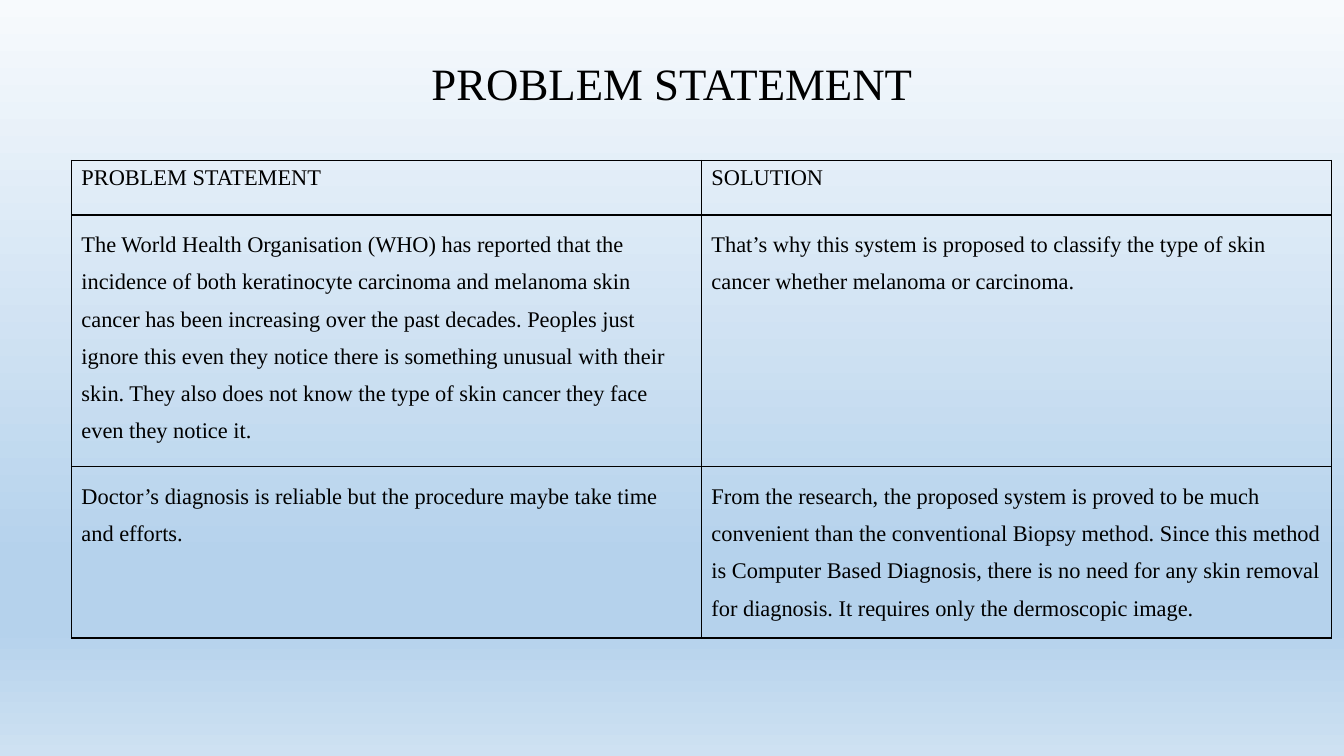
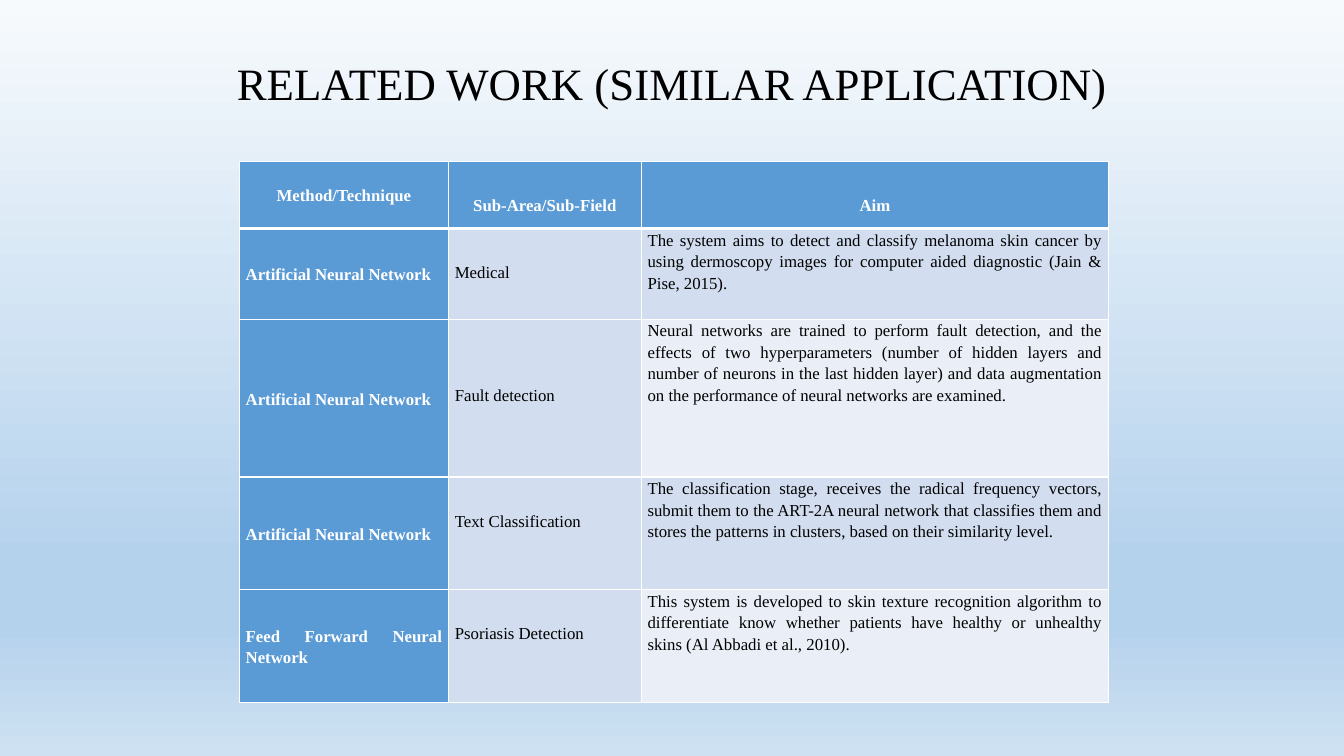
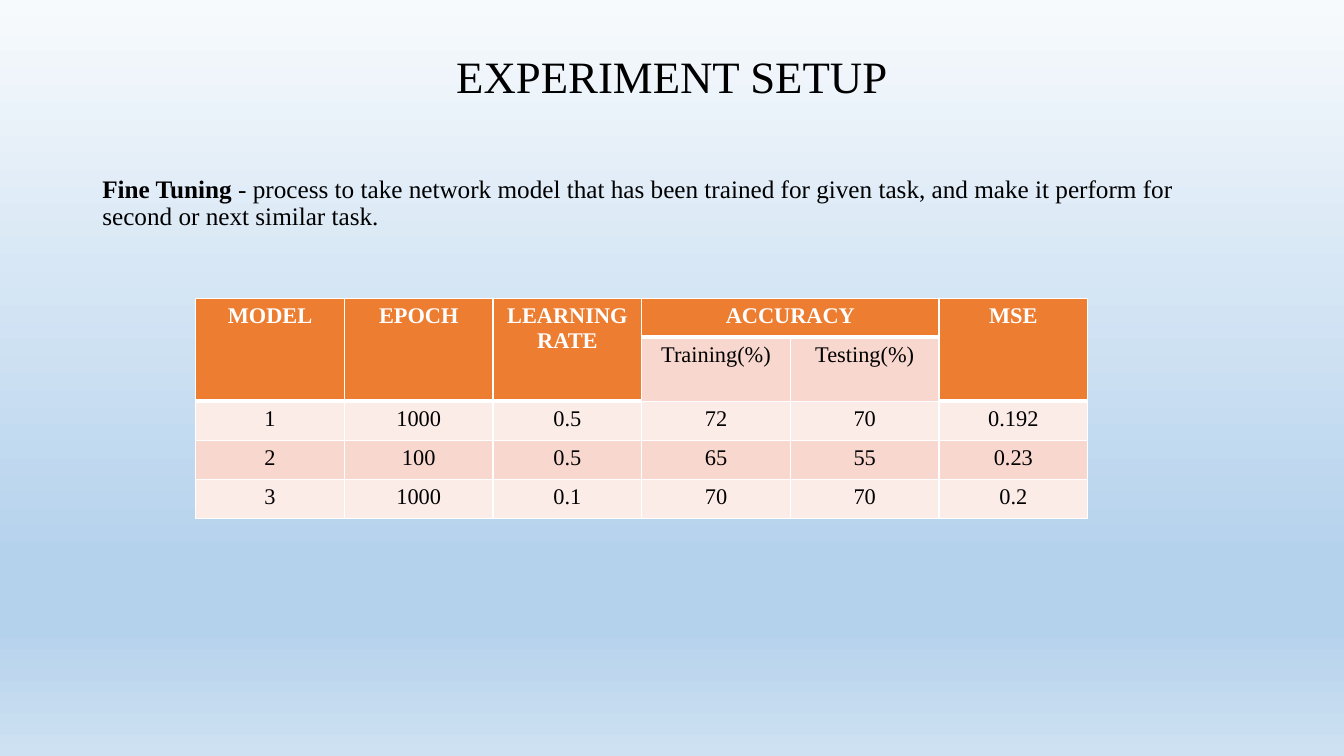
from collections import namedtuple

from lxml.etree import SubElement
from pptx import Presentation
from pptx.dml.color import RGBColor
from pptx.enum.text import MSO_ANCHOR as Anchor, PP_ALIGN as Align
from pptx.oxml import parse_xml
from pptx.oxml.ns import nsdecls, qn
from pptx.util import Inches, Pt

BLACK = RGBColor(0x00, 0x00, 0x00)
WHITE = RGBColor(0xFF, 0xFF, 0xFF)
SKY = RGBColor(0xB5, 0xD2, 0xEC)
SKY_TOP = RGBColor(0xF7, 0xFA, 0xFD)
SKY_BOTTOM = RGBColor(0xCE, 0xE1, 0xF2)
BLUE = RGBColor(0x5B, 0x9B, 0xD5)
BLUE_TINT = RGBColor(0xD2, 0xDE, 0xEF)
BLUE_PALE = RGBColor(0xEA, 0xEF, 0xF7)
ORANGE = RGBColor(0xED, 0x7D, 0x31)
ORANGE_TINT = RGBColor(0xF8, 0xD7, 0xCE)
ORANGE_PALE = RGBColor(0xFC, 0xEC, 0xE8)

BACKGROUND_STOPS = ((0, SKY_TOP), (74, SKY), (83, SKY), (100, SKY_BOTTOM))
FONT = "Times New Roman"
GRID_COLUMNS, GRID_ROWS = 160, 90
SLIDE_WIDTH, SLIDE_HEIGHT = Inches(13.33), Inches(7.5)

Box = namedtuple("Box", "left top width height")
TITLE_BOX = Box(11, 4.8, 138, 10.8)


def across(columns):
    return int(SLIDE_WIDTH * columns / GRID_COLUMNS)


def down(rows):
    return int(SLIDE_HEIGHT * rows / GRID_ROWS)


def place(box):
    return across(box.left), down(box.top), across(box.width), down(box.height)


def write_text(paragraph, text, size=16, bold=False, colour=BLACK, align=Align.LEFT,
               line_spacing=1.0, space_before=0, space_after=0):
    paragraph.alignment = align
    paragraph.line_spacing = line_spacing
    paragraph.space_before = Pt(space_before)
    paragraph.space_after = Pt(space_after)
    run = paragraph.add_run()
    run.text = text
    run.font.name = FONT
    run.font.size = Pt(size)
    run.font.bold = bold
    run.font.color.rgb = colour


def add_text_box(slide, box, anchor=Anchor.TOP):
    frame = slide.shapes.add_textbox(*place(box)).text_frame
    frame.word_wrap = True
    frame.vertical_anchor = anchor
    return frame.paragraphs[0]


def set_background(master):
    fill = master.background.fill
    fill.gradient()
    fill.gradient_angle = 270
    stop_list = master.element.find(".//" + qn("a:gsLst"))
    for stop in list(stop_list):
        stop_list.remove(stop)
    for percent, colour in BACKGROUND_STOPS:
        stop = SubElement(stop_list, qn("a:gs"), pos=str(percent * 1000))
        SubElement(stop, qn("a:srgbClr"), val=str(colour))


def set_borders(cell, colour, **widths):
    properties = cell._tc.get_or_add_tcPr()
    for index, side in enumerate("LRTB"):
        width = Pt(widths.get(side, 1))
        properties.insert(index, parse_xml(
            f'<a:ln{side} {nsdecls("a")} w="{width}"><a:solidFill>'
            f'<a:srgbClr val="{colour}"/></a:solidFill></a:ln{side}>'))


def fill_cell(cell, text, fill=None, anchor=Anchor.TOP, **text_format):
    cell.vertical_anchor = anchor
    if fill is None:
        cell.fill.background()
    else:
        cell.fill.solid()
        cell.fill.fore_color.rgb = fill
    if text:
        write_text(cell.text_frame.paragraphs[0], text, **text_format)


def add_grid_table(slide, left, top, column_widths, row_heights, border, heading_depths):
    box = Box(left, top, sum(column_widths), sum(row_heights))
    table = slide.shapes.add_table(len(row_heights), len(column_widths), *place(box)).table
    table.first_row = table.horz_banding = False
    for column, width in zip(table.columns, column_widths):
        column.width = across(width)
    for row, height in zip(table.rows, row_heights):
        row.height = down(height)
    for column, depth in enumerate(heading_depths):
        for row in range(len(row_heights)):
            set_borders(table.cell(row, column), border,
                        T=3 if depth and row == depth else 1,
                        B=3 if depth and row == depth - 1 else 1)
    return table


def add_titled_slide(presentation, title, box=TITLE_BOX):
    slide = presentation.slides.add_slide(presentation.slide_layouts[6])
    write_text(add_text_box(slide, box, Anchor.MIDDLE), title, size=32,
               align=Align.CENTER, line_spacing=0.9)
    return slide


def add_problem_slide(presentation):
    slide = add_titled_slide(presentation, "PROBLEM STATEMENT")
    texts = (
        ("PROBLEM STATEMENT", "SOLUTION"),
        ("The World Health Organisation (WHO) has reported that the incidence of both "
         "keratinocyte carcinoma and melanoma skin cancer has been increasing over the past "
         "decades. Peoples just ignore this even they notice there is something unusual with "
         "their skin. They also does not know the type of skin cancer they face even they "
         "notice it.",
         "That’s why this system is proposed to classify the type of skin cancer whether "
         "melanoma or carcinoma."),
        ("Doctor’s diagnosis is reliable but the procedure maybe take time and efforts.",
         "From the research, the proposed system is proved to be much convenient than the "
         "conventional Biopsy method. Since this method is Computer Based Diagnosis, there is "
         "no need for any skin removal for diagnosis. It requires only the dermoscopic image."),
    )
    table = add_grid_table(slide, 8.5, 19.1, [75, 75], [6.5, 27.8, 18.9], BLACK, [0, 0])
    for row, row_texts in enumerate(texts):
        for column, text in enumerate(row_texts):
            fill_cell(table.cell(row, column), text, line_spacing=1.5 if row else 1.0)


def add_related_work_slide(presentation):
    slide = add_titled_slide(presentation, "RELATED WORK (SIMILAR APPLICATION)")
    texts = (
        ("Method/Technique", "Sub-Area/Sub-Field", "Aim"),
        ("Artificial Neural Network", "Medical",
         "The system aims to detect and classify melanoma skin cancer by using dermoscopy "
         "images for computer aided diagnostic (Jain & Pise, 2015)."),
        ("Artificial Neural Network", "Fault detection",
         "Neural networks are trained to perform fault detection, and the effects of two "
         "hyperparameters (number of hidden layers and number of neurons in the last hidden "
         "layer) and data augmentation on the performance of neural networks are examined."),
        ("Artificial Neural Network", "Text Classification",
         "The classification stage, receives the radical frequency vectors, submit them to "
         "the ART-2A neural network that classifies them and stores the patterns in clusters, "
         "based on their similarity level."),
        ("Feed Forward Neural Network", "Psoriasis Detection",
         "This system is developed to skin texture recognition algorithm to differentiate "
         "know whether patients have healthy or unhealthy skins (Al Abbadi et al., 2010)."),
    )
    line_step = 3.84
    lines_above = ((0, 1, 1), (0, 1, 0), (0, 2, 0), (0, 1, 0), (0, 1, 0))
    table = add_grid_table(slide, 28.5, 19.2, [24.9, 22.95, 55.65],
                           [8, 10.8, 18.8, 13.4, 13.4], WHITE, [1, 1, 1])
    for row, row_texts in enumerate(texts):
        for column, text in enumerate(row_texts):
            cell = table.cell(row, column)
            heading = row == 0 or column == 0
            band = BLUE_PALE if column == 2 and row % 2 == 0 else BLUE_TINT
            cell.margin_left = cell.margin_right = across(0.75)
            cell.margin_top = down(line_step * lines_above[row][column])
            cell.margin_bottom = 0
            fill_cell(cell, text, fill=BLUE if heading else band,
                      anchor=Anchor.TOP if column else Anchor.MIDDLE,
                      size=12, bold=heading, colour=WHITE if heading else BLACK,
                      align=Align.JUSTIFY if row else Align.CENTER,
                      line_spacing=1.15, space_after=8)


def add_experiment_slide(presentation):
    slide = add_titled_slide(presentation, "EXPERIMENT SETUP", TITLE_BOX._replace(height=9.1))
    definition = add_text_box(slide, Box(11, 20.4, 138, 10))
    for text, bold in (
        ("Fine Tuning ", True),
        ("- process to take network model that has been trained for given task, and make it "
         "perform for second or next similar task.", False),
    ):
        write_text(definition, text, size=18, bold=bold, line_spacing=0.9, space_before=10)
    texts = (
        ("MODEL", "EPOCH", "LEARNING RATE", "ACCURACY", "", "MSE"),
        ("", "", "", "Training(%)", "Testing(%)", ""),
        ("1", "1000", "0.5", "72", "70", "0.192"),
        ("2", "100", "0.5", "65", "55", "0.23"),
        ("3", "1000", "0.1", "70", "70", "0.2"),
    )
    depths = [2, 2, 2, 1, 1, 2]
    table = add_grid_table(slide, 23.3, 35.5, [17.7] * 6, [4.65, 7.05, 4.65, 4.65, 4.65],
                           WHITE, depths)
    for column, depth in enumerate(depths):
        if depth == 2:
            table.cell(0, column).merge(table.cell(1, column))
    table.cell(0, 3).merge(table.cell(0, 4))
    for row, row_texts in enumerate(texts):
        for column, text in enumerate(row_texts):
            heading = row < depths[column]
            band = ORANGE_TINT if row % 2 else ORANGE_PALE
            fill_cell(table.cell(row, column), text, fill=ORANGE if heading else band,
                      bold=heading, colour=WHITE if heading else BLACK, align=Align.CENTER)


def main():
    presentation = Presentation()
    presentation.slide_width, presentation.slide_height = SLIDE_WIDTH, SLIDE_HEIGHT
    set_background(presentation.slide_master)
    add_problem_slide(presentation)
    add_related_work_slide(presentation)
    add_experiment_slide(presentation)
    presentation.save("out.pptx")


if __name__ == "__main__":
    main()
